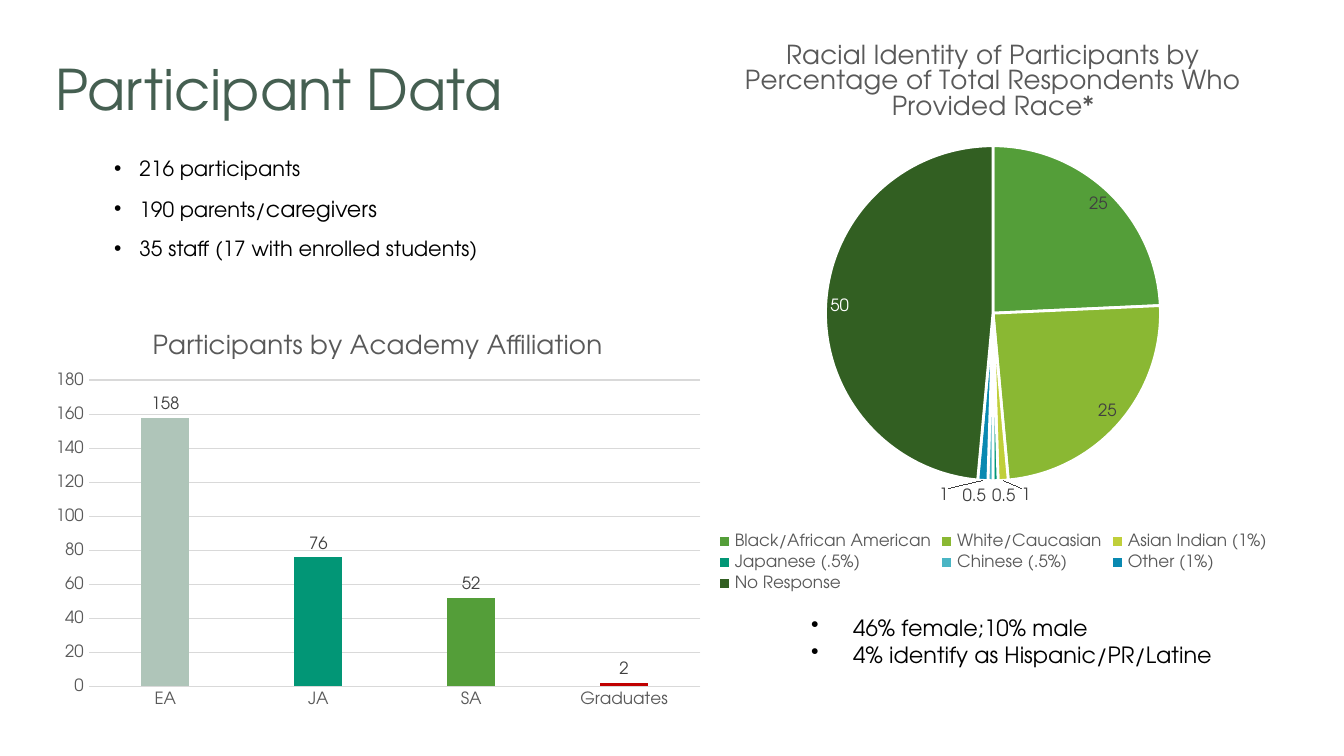
from dataclasses import dataclass
from pptx import Presentation
from pptx.chart.data import CategoryChartData as Data
from pptx.dml.color import RGBColor as Rgb
from pptx.enum.chart import XL_CHART_TYPE as Kind
from pptx.enum.chart import XL_LABEL_POSITION as Spot
from pptx.enum.chart import XL_LEGEND_POSITION as Side
from pptx.enum.chart import XL_TICK_MARK as Tick
from pptx.enum.text import MSO_ANCHOR as Anchor
from pptx.enum.text import MSO_AUTO_SIZE as Fit
from pptx.enum.text import PP_ALIGN as Align
from pptx.oxml import parse_xml
from pptx.oxml.ns import nsdecls
from pptx.util import Pt


@dataclass(frozen=True)
class Theme:
    face: str = "TeX Gyre Adventor"
    head: str = "455F51"
    ink: str = "000000"
    gray: str = "595959"
    label: str = "404040"
    grid: str = "D9D9D9"
    white: str = "FFFFFF"
    green: str = "549E39"
    teal: str = "029676"
    title: float = 30
    body: float = 11.2
    large: float = 11.9
    note: float = 12
    chart: float = 14
    small: float = 9


T = Theme()
RACES = [
    ("Black/African American", 25, T.green),
    ("White/Caucasian", 25, "8AB833"),
    ("Asian Indian (1%)", 1, "C0CF3A"),
    ("Japanese (.5%)", 0.5, T.teal),
    ("Chinese (.5%)", 0.5, "4AB5C4"),
    ("Other (1%)", 1, "0989B1"),
    ("No Response", 50, "325F22"),
]
SCHOOLS = [
    ("EA", 158, "AFC5B9"),
    ("JA", 76, T.teal),
    ("SA", 52, T.green),
    ("Graduates", 2, "C00000"),
]


def style(font, size, color):
    font.name = T.face
    font.size = Pt(size)
    font.bold = False
    font.color.rgb = Rgb.from_string(color)


def place(shape, box):
    shape.left, shape.top, shape.width, shape.height = map(Pt, box)


def paint(fill, color):
    fill.solid()
    fill.fore_color.rgb = Rgb.from_string(color)


def rule(line, color, width):
    paint(line.fill, color)
    line.width = Pt(width)


def add_title(slide, box):
    shape = slide.shapes.title
    place(shape, box)
    frame = shape.text_frame
    frame.text = "Participant Data"
    frame.auto_size = Fit.NONE
    frame.vertical_anchor = Anchor.MIDDLE
    para = frame.paragraphs[0]
    para.alignment = Align.LEFT
    para.line_spacing = 0.9
    style(para.font, T.title, T.head)


def add_list(frame, items, size, indent, gap):
    frame.word_wrap = True
    frame.auto_size = Fit.NONE
    frame.vertical_anchor = Anchor.TOP
    for i, parts in enumerate(items):
        para = frame.add_paragraph() if i else frame.paragraphs[0]
        props = para._p.get_or_add_pPr()
        props.set("marL", str(Pt(indent)))
        props.set("indent", str(-Pt(indent)))
        props.append(parse_xml(f'<a:buChar {nsdecls("a")} char="•"/>'))
        para.space_before = Pt(0)
        para.space_after = Pt(gap)
        style(para.font, size, T.ink)
        for text, own in parts:
            run = para.add_run()
            run.text = text
            if own:
                run.font.size = Pt(own)


def add_facts(slide, box):
    shape = slide.placeholders[1]
    place(shape, box)
    items = [
        [("216 participants", None)],
        [("190 parents/", None), ("caregivers", T.large)],
        [("35 staff (17 with enrolled students)", None)],
    ]
    add_list(shape.text_frame, items, T.body, 13.5, 7.5)


def add_notes(slide, box):
    shape = slide.shapes.add_textbox(*map(Pt, box))
    items = [
        [("46% female;10% male", None)],
        [("4% identify as Hispanic/PR/Latine", None)],
    ]
    add_list(shape.text_frame, items, T.note, 22.5, 0)


def set_plot(chart, area):
    plot = chart.element.xpath(".//c:plotArea")[0]
    for old in plot.xpath("./c:layout"):
        plot.remove(old)
    spots = "".join(f'<c:{k} val="{v}"/>' for k, v in zip("xywh", area))
    plot.insert(0, parse_xml(
        f'<c:layout {nsdecls("c")}><c:manualLayout>'
        '<c:layoutTarget val="inner"/><c:xMode val="edge"/>'
        f'<c:yMode val="edge"/>{spots}</c:manualLayout></c:layout>'))


def add_graph(slide, box, kind, title, rows, area, spot):
    data = Data()
    data.categories = [name for name, _, _ in rows]
    data.add_series("Series 1", [val for _, val, _ in rows])
    chart = slide.shapes.add_chart(kind, *map(Pt, box), data).chart
    style(chart.font, T.small, T.gray)
    chart.has_title = True
    frame = chart.chart_title.text_frame
    frame.text = title
    style(frame.paragraphs[0].font, T.chart, T.gray)
    set_plot(chart, area)
    chart.plots[0].vary_by_categories = kind == Kind.PIE
    series = chart.plots[0].series[0]
    paint(series.format.fill, T.green)
    for i, (_, _, color) in enumerate(rows):
        paint(series.points[i].format.fill, color)
    labels = series.data_labels
    labels.show_value = True
    labels.position = spot
    style(labels.font, T.small, T.label)
    return chart


def add_pie(slide, box):
    title = ("Racial Identity of Participants by Percentage "
             "of Total Respondents Who Provided Race*")
    chart = add_graph(slide, box, Kind.PIE, title, RACES,
                      (0.26, 0.22, 0.48, 0.58), Spot.BEST_FIT)
    chart.has_legend = True
    chart.legend.position = Side.BOTTOM
    chart.legend.include_in_layout = False
    style(chart.legend.font, T.small, T.gray)
    points = chart.plots[0].series[0].points
    for i in range(len(RACES)):
        rule(points[i].format.line, T.white, 1.5)
    last = points[len(RACES) - 1].data_label
    style(last.font, T.small, T.white)
    last.position = Spot.BEST_FIT


def add_bars(slide, box):
    chart = add_graph(slide, box, Kind.COLUMN_CLUSTERED,
                      "Participants by Academy Affiliation", SCHOOLS,
                      (0.07, 0.17, 0.91, 0.76), Spot.OUTSIDE_END)
    chart.has_legend = False
    chart.plots[0].gap_width = 219
    chart.plots[0].overlap = -27
    cat, val = chart.category_axis, chart.value_axis
    for axis in (cat, val):
        axis.major_tick_mark = axis.minor_tick_mark = Tick.NONE
        style(axis.tick_labels.font, T.small, T.gray)
    rule(cat.format.line, T.grid, 0.75)
    val.format.line.fill.background()
    val.minimum_scale, val.maximum_scale, val.major_unit = 0, 180, 20
    rule(val.major_gridlines.format.line, T.grid, 0.75)


def main():
    deck = Presentation()
    deck.slide_width, deck.slide_height = Pt(720), Pt(405)
    slide = deck.slides.add_slide(deck.slide_layouts[1])
    add_title(slide, (22.5, 10, 620.5, 78.5))
    add_facts(slide, (54, 80, 220.5, 84))
    add_pie(slide, (344, 10, 376, 309.5))
    add_bars(slide, (22.5, 167, 360, 216))
    add_notes(slide, (427.5, 325.5, 263.5, 58))
    deck.save("out.pptx")


if __name__ == "__main__":
    main()
